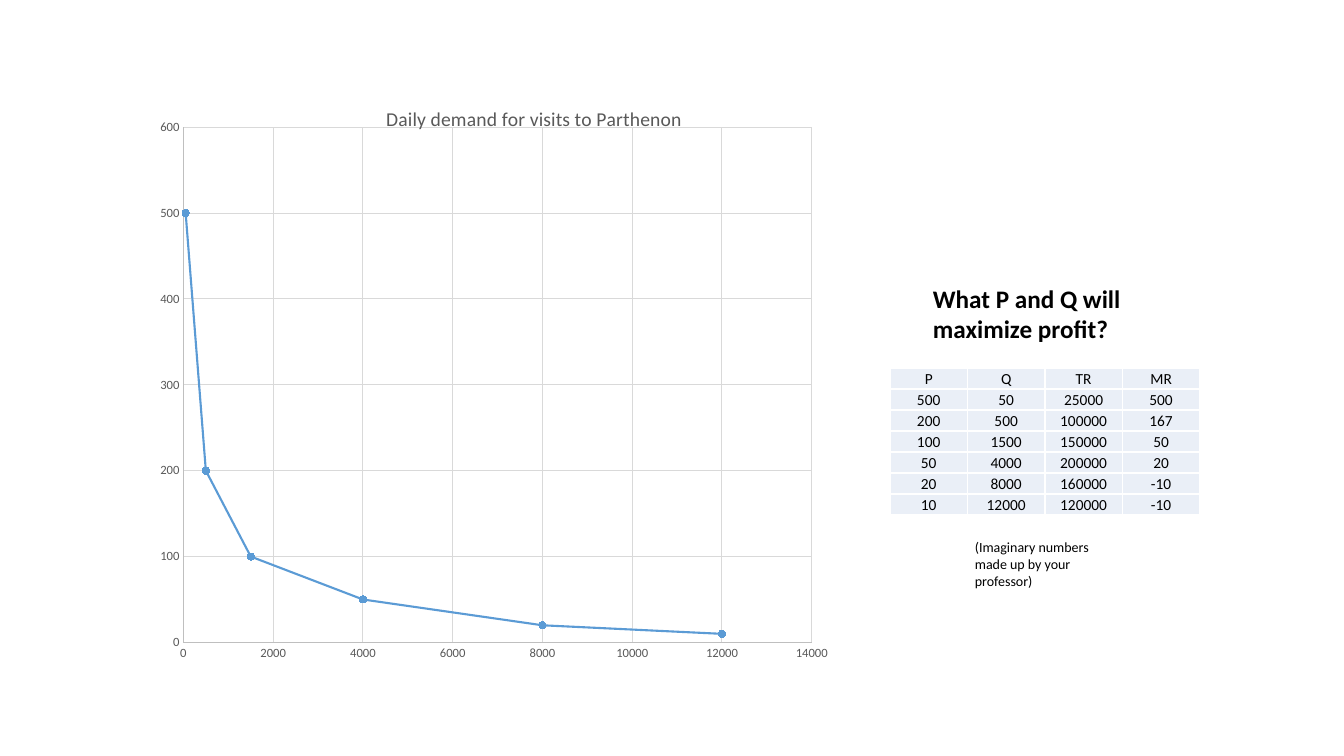
from pptx import Presentation, util as u
from pptx.chart.data import XyChartData
from pptx.dml.color import RGBColor
from pptx.enum import chart as charts, text
from pptx.oxml import parse_xml
from pptx.oxml.ns import nsdecls

FONT = "Calibri"
GREY, BLUE, BLACK = "595959", "5B9BD5", "000000"


def px(length):
    return u.Emu(round(length * 914400 / 100.8))


def style_font(font, size, color=BLACK, bold=False):
    font.name, font.size, font.bold = FONT, u.Pt(size), bold
    font.color.rgb = RGBColor.from_string(color)


presentation = Presentation()
presentation.slide_width, presentation.slide_height = px(1344), px(756)
slide = presentation.slides.add_slide(presentation.slide_layouts[6])

header = ("P", "Q", "TR", "MR")
demand = [
    (500, 50, 25000, 500),
    (200, 500, 100000, 167),
    (100, 1500, 150000, 50),
    (50, 4000, 200000, 20),
    (20, 8000, 160000, -10),
    (10, 12000, 120000, -10),
]

# Demand curve
chart_data = XyChartData()
points = chart_data.add_series("Series 1")
for price, quantity, revenue, marginal in demand:
    points.add_data_point(quantity, price)
chart = slide.shapes.add_chart(
    charts.XL_CHART_TYPE.XY_SCATTER_LINES,
    px(151), px(78), px(772), px(600), chart_data).chart
style_font(chart.font, 10)
chart.has_legend = False
chart.has_title = True
title = chart.chart_title
title.text_frame.text = "Daily demand for visits to Parthenon"
style_font(title.text_frame.paragraphs[0].runs[0].font, 14, GREY)

curve = chart.plots[0].series[0]
chart.plots[0].vary_by_categories = False
curve.smooth = False
curve.format.line.width = u.Pt(1.5)
curve.format.line.color.rgb = RGBColor.from_string(BLUE)
curve.marker.style = charts.XL_MARKER_STYLE.CIRCLE
curve.marker.size = 5
curve.marker.format.fill.solid()
curve.marker.format.fill.fore_color.rgb = RGBColor.from_string(BLUE)
curve.marker.format.line.color.rgb = RGBColor.from_string(BLUE)

# Axes and gridlines
for axis, maximum, step in ((chart.category_axis, 14000, 2000),
                            (chart.value_axis, 600, 100)):
    axis.minimum_scale, axis.maximum_scale, axis.major_unit = 0, maximum, step
    axis.major_tick_mark = axis.minor_tick_mark = charts.XL_TICK_MARK.NONE
    axis.has_major_gridlines = True
    style_font(axis.tick_labels.font, 9, GREY)
    for line, color in ((axis.format.line, "BFBFBF"),
                        (axis.major_gridlines.format.line, "D9D9D9")):
        line.width = u.Pt(0.75)
        line.color.rgb = RGBColor.from_string(color)

# Fixed places for the title and the plot area
title_layout = {"xMode": "edge", "yMode": "edge", "x": 0.3, "y": 0.04}
plot_layout = {"layoutTarget": "inner", "xMode": "edge", "yMode": "edge",
               "x": 0.042, "y": 0.082, "w": 0.814, "h": 0.859}
chart_xml = chart._chartSpace.chart
for parent, layout in ((chart_xml.find("{*}title"), title_layout),
                       (chart_xml.plotArea, plot_layout)):
    for old_layout in parent.findall("{*}layout"):
        parent.remove(old_layout)
    settings = "".join(f'<c:{name} val="{value}"/>' for name, value in layout.items())
    place = 1 if layout is title_layout else 0
    parent.insert(place, parse_xml(
        f'<c:layout {nsdecls("c")}><c:manualLayout>{settings}</c:manualLayout></c:layout>'))

# Price, quantity and revenue table
rows = [header] + demand
table = slide.shapes.add_table(
    len(rows), len(header), px(890), px(368), px(310), px(147)).table
table.first_row = table.horz_banding = False
for row, values in enumerate(rows):
    for column, value in enumerate(values):
        cell = table.cell(row, column)
        cell.margin_left = cell.margin_right = cell.margin_top = px(1)
        cell.margin_bottom = 0
        cell.vertical_anchor = text.MSO_ANCHOR.BOTTOM
        for side in "LRTB":
            cell._tc.get_or_add_tcPr().append(parse_xml(
                f'<a:ln{side} {nsdecls("a")} w="12700"><a:solidFill>'
                f'<a:srgbClr val="FFFFFF"/></a:solidFill></a:ln{side}>'))
        cell.fill.solid()
        cell.fill.fore_color.rgb = RGBColor.from_string("EAEFF7")
        paragraph = cell.text_frame.paragraphs[0]
        paragraph.alignment = text.PP_ALIGN.CENTER
        run = paragraph.add_run()
        run.text = str(value)
        style_font(run.font, 11)

# Note and question
for words, box, size, bold in (
        ("(Imaginary numbers made up by your professor)", (965, 534, 161, 61), 10, False),
        ("What P and Q will maximize profit?", (923, 278, 233, 72), 18, True)):
    frame = slide.shapes.add_textbox(*map(px, box)).text_frame
    frame.word_wrap = True
    frame.auto_size = text.MSO_AUTO_SIZE.SHAPE_TO_FIT_TEXT
    run = frame.paragraphs[0].add_run()
    run.text = words
    style_font(run.font, size, bold=bold)

presentation.save("out.pptx")
